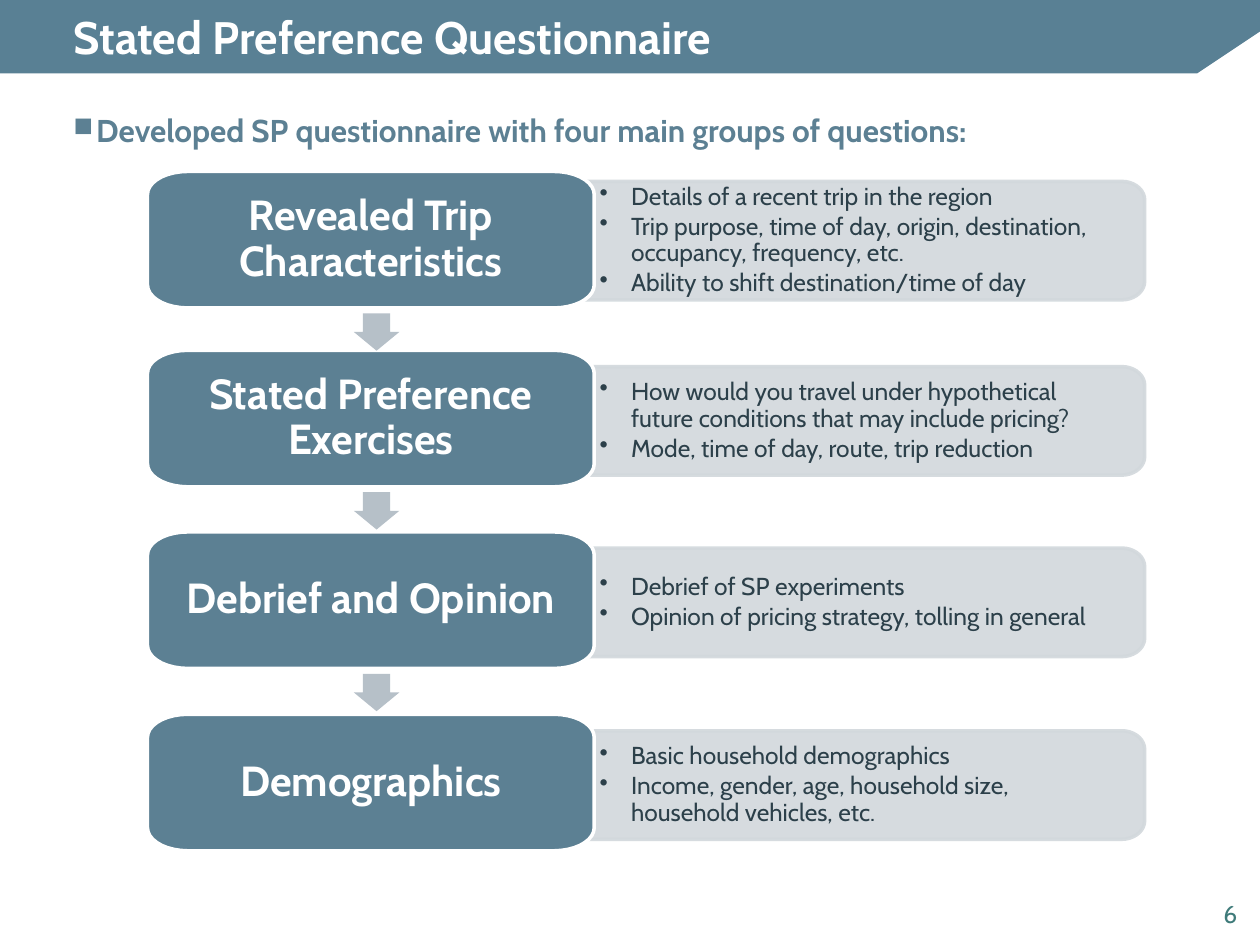
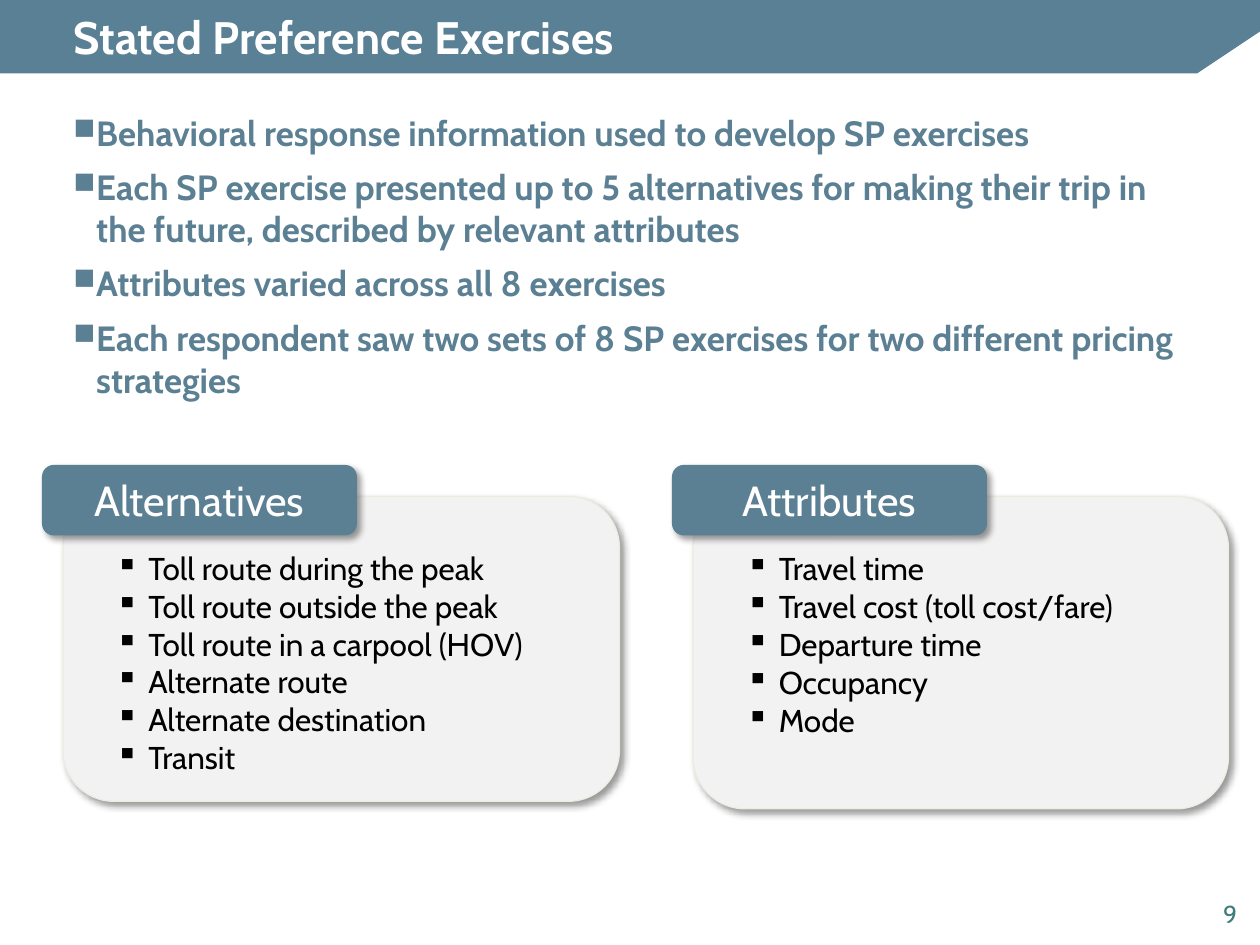
"""Build two slides on a stated preference questionnaire."""
import dataclasses
import math

import lxml.etree
import pptx
import pptx.dml.color
import pptx.enum.shapes
import pptx.enum.text
import pptx.oxml.ns
import pptx.util

Pt = pptx.util.Pt
qn = pptx.oxml.ns.qn
ALIGN = pptx.enum.text.PP_ALIGN
ANCHOR = pptx.enum.text.MSO_ANCHOR
PRESET = pptx.enum.shapes.MSO_SHAPE


@dataclasses.dataclass(frozen=True)
class TextStyle:
    """Size, colour and weight of a kind of text."""
    size: float
    color: str
    bold: bool = False


@dataclasses.dataclass(frozen=True)
class Bullet:
    """Bullet mark with its text indent, hanging distance and size."""
    mark: str
    margin: float
    hanging: float
    percent: int = 100


@dataclasses.dataclass(frozen=True)
class Theme:
    """Colours, type styles and bullets shared by the slides."""
    font: str = "Cabin"
    band: str = "598094"
    blue: str = "5C8093"
    panel: str = "D2D8DC"
    arrow: str = "B6C0C8"
    card: str = "F2F2F2"
    card_line: str = "EEECE1"
    white: str = "FFFFFF"
    title: TextStyle = TextStyle(26, "FFFFFF", True)
    small_lead: TextStyle = TextStyle(18, "5C8093", True)
    lead: TextStyle = TextStyle(20, "5C8093", True)
    step: TextStyle = TextStyle(24, "FFFFFF", True)
    detail: TextStyle = TextStyle(14, "2C404A")
    card_title: TextStyle = TextStyle(24, "FFFFFF")
    card_item: TextStyle = TextStyle(18, "000000")
    number: TextStyle = TextStyle(14, "3F7B7A")
    lead_bullet: Bullet = Bullet("■", 13, 13, 85)
    detail_bullet: Bullet = Bullet("•", 18, 18)
    card_bullet: Bullet = Bullet("▪", 36.7, 18.7)


THEME = Theme()

STEPS = [
    (98, (103.7, 67.7), "Revealed Trip Characteristics",
     ["Details of a recent trip in the region",
      "Trip purpose, time of day, origin, destination, occupancy, frequency, etc.",
      "Ability to shift destination/time of day"]),
    (200.2, (209.5, 62), "Stated Preference Exercises",
     ["How would you travel under hypothetical future conditions that may include pricing?",
      "Mode, time of day, route, trip reduction"]),
    (304, (313.2, 62), "Debrief and Opinion",
     ["Debrief of SP experiments",
      "Opinion of pricing strategy, tolling in general"]),
    (408.2, (417.6, 62), "Demographics",
     ["Basic household demographics",
      "Income, gender, age, household size, household vehicles, etc."]),
]

EXERCISE_POINTS = [
    "Behavioral response information used to develop SP exercises",
    "Each SP exercise presented up to 5 alternatives for making their trip in "
    "the future, described by relevant attributes",
    "Attributes varied across all 8 exercises",
    "Each respondent saw two sets of 8 SP exercises for two different pricing strategies",
]

CARDS = [
    (24, (318, 174.2), "Alternatives",
     ["Toll route during the peak", "Toll route outside the peak",
      "Toll route in a carpool (HOV)", "Alternate route",
      "Alternate destination", "Transit"]),
    (384, (306, 178.5), "Attributes",
     ["Travel time", "Travel cost (toll cost/fare)", "Departure time",
      "Occupancy", "Mode"]),
]


def set_format(target, values):
    """Set each named attribute of the target."""
    for name, value in values.items():
        setattr(target, name, value)


def rgb(color):
    """Return a colour object for a hex string."""
    return pptx.dml.color.RGBColor.from_string(color)


def add_bullet(paragraph, bullet):
    """Give the paragraph a hanging bullet."""
    properties = paragraph._p.get_or_add_pPr()
    properties.set("marL", str(Pt(bullet.margin)))
    properties.set("indent", str(-Pt(bullet.hanging)))
    size = lxml.etree.SubElement(properties, qn("a:buSzPct"))
    size.set("val", str(bullet.percent * 1000))
    lxml.etree.SubElement(properties, qn("a:buChar")).set("char", bullet.mark)


def write_text(shape, lines, style, insets=(7.2, 3.6, 7.2, 3.6),
               anchor=ANCHOR.TOP, bullet=None, **paragraph_format):
    """Fill the shape with one formatted paragraph per line."""
    frame = shape.text_frame
    sides = ("margin_left", "margin_top", "margin_right", "margin_bottom")
    set_format(frame, {
        "word_wrap": True,
        "auto_size": pptx.enum.text.MSO_AUTO_SIZE.NONE,
        "vertical_anchor": anchor,
        **{side: Pt(inset) for side, inset in zip(sides, insets)},
    })
    for index, line in enumerate(lines):
        paragraph = frame.add_paragraph() if index else frame.paragraphs[0]
        if bullet:
            add_bullet(paragraph, bullet)
        set_format(paragraph, {"alignment": ALIGN.LEFT, **paragraph_format})
        run = paragraph.add_run()
        run.text = line
        set_format(run.font, {"name": THEME.font, "size": Pt(style.size),
                              "bold": style.bold})
        run.font.color.rgb = rgb(style.color)


def paint(shape, fill, line=None, line_width=2):
    """Set the fill and outline of the shape and remove its shadow."""
    shape.shadow.inherit = False
    shape.fill.solid()
    shape.fill.fore_color.rgb = rgb(fill)
    if line:
        shape.line.color.rgb = rgb(line)
        shape.line.width = Pt(line_width)
    else:
        shape.line.fill.background()


def make_translucent(shape, percent):
    """Set the opacity of the fill and outline."""
    for color in shape.element.spPr.iter(qn("a:srgbClr")):
        lxml.etree.SubElement(color, qn("a:alpha")).set("val", str(percent * 1000))


def add_shadow(shape):
    """Give the shape a soft shadow to the lower right."""
    effects = shape.element.spPr.find(qn("a:effectLst"))
    shadow = lxml.etree.SubElement(effects, qn("a:outerShdw"), {
        "blurRad": str(Pt(4)), "dist": str(Pt(3)), "dir": str(45 * 60000),
        "algn": "tl", "rotWithShape": "0"})
    color = lxml.etree.SubElement(shadow, qn("a:srgbClr"), {"val": "000000"})
    lxml.etree.SubElement(color, qn("a:alpha")).set("val", "40000")


def add_preset(slide, preset, box):
    """Add a preset shape in a box given in points."""
    return slide.shapes.add_shape(preset, *map(Pt, box))


def add_text_box(slide, box, lines, style, **text_format):
    """Add a text box with formatted lines."""
    text_box = slide.shapes.add_textbox(*map(Pt, box))
    write_text(text_box, lines, style, **text_format)


def add_outline(slide, points):
    """Add a closed freeform through points given in points."""
    start, *others = [(Pt(x), Pt(y)) for x, y in points]
    builder = slide.shapes.build_freeform(*start)
    builder.add_line_segments(others, close=True)
    return builder.convert_to_shape()


def rounded_outline(box, radius_x, radius_y, square_left=False):
    """Return the points of a box with elliptical corners."""
    left, top, width, height = box
    right, bottom = left + width, top + height
    points = []
    corners = ((right, top), (right, bottom), (left, bottom), (left, top))
    for quarter, (x, y) in enumerate(corners):
        if square_left and x == left:
            points.append((x, y))
            continue
        center_x = x + radius_x if x == left else x - radius_x
        center_y = y + radius_y if y == top else y - radius_y
        for step in range(0, 91, 10):
            angle = math.radians(90 * quarter - 90 + step)
            points.append((center_x + radius_x * math.cos(angle),
                           center_y + radius_y * math.sin(angle)))
    return points


def add_slide(presentation, title, number):
    """Add a slide with its band, title and page number."""
    slide = presentation.slides.add_slide(presentation.slide_layouts[5])
    band = add_outline(slide, [(0, 42), (684, 42), (720, 18), (720, 0), (0, 0)])
    paint(band, THEME.band)
    heading = slide.shapes.title
    heading.element.addprevious(band.element)
    set_format(heading, {"left": Pt(42), "top": Pt(0),
                         "width": Pt(648), "height": Pt(42)})
    write_text(heading, [title], THEME.title, insets=(0, 3.6, 7.2, 3.6),
               anchor=ANCHOR.MIDDLE)
    add_text_box(slide, (653, 498, 54, 36), [number], THEME.number,
                 insets=(7.2, 3.6, 0, 3.6), anchor=ANCHOR.BOTTOM,
                 alignment=ALIGN.RIGHT)
    return slide


def add_lead(slide, lines, style, height):
    """Add the main bulleted statements below the band."""
    add_text_box(slide, (42, 60, 648, height), lines, style,
                 insets=(0, 3.6, 7.2, 3.6), bullet=THEME.lead_bullet,
                 space_after=Pt(style.size * 0.35))


def add_step(slide, top, panel_span, name, details):
    """Add a step box with the panel of its details."""
    panel_top, panel_height = panel_span
    panel_box = (334.6, panel_top, 319.5, panel_height)
    panel = add_outline(slide, rounded_outline(panel_box, 13, 10.6, square_left=True))
    paint(panel, THEME.panel, THEME.panel)
    make_translucent(panel, 90)
    write_text(panel, details, THEME.detail, insets=(8, 9.4, 13, 9.4),
               anchor=ANCHOR.MIDDLE, bullet=THEME.detail_bullet,
               line_spacing=0.9, space_after=Pt(2))
    step = add_outline(slide, rounded_outline((84.3, top, 255.3, 78), 23, 13.2))
    paint(step, THEME.blue, THEME.white)
    write_text(step, [name], THEME.step, insets=(17.3, 12.2, 17.3, 12.2),
               anchor=ANCHOR.MIDDLE, alignment=ALIGN.CENTER, line_spacing=0.9)


def add_step_arrow(slide, step_top):
    """Add the arrow that leads on from a step."""
    arrow = add_preset(slide, PRESET.DOWN_ARROW, (202.2, step_top + 81, 26, 21.4))
    arrow.adjustments[0] = 0.6
    paint(arrow, THEME.arrow)


def add_card(slide, left, size, name, items):
    """Add a list card with an overlapping title tab."""
    card = add_preset(slide, PRESET.ROUNDED_RECTANGLE, (left + 12, 283.7, *size))
    paint(card, THEME.card, THEME.card_line, 0.75)
    add_shadow(card)
    write_text(card, items, THEME.card_item, insets=(3.6, 21.6, 3.6, 3.6),
               bullet=THEME.card_bullet)
    tab = add_preset(slide, PRESET.ROUNDED_RECTANGLE, (left, 265.7, 180, 40.3))
    paint(tab, THEME.blue)
    add_shadow(tab)
    write_text(tab, [name], THEME.card_title, anchor=ANCHOR.MIDDLE,
               alignment=ALIGN.CENTER)


def main():
    """Build and save the presentation."""
    presentation = pptx.Presentation()
    set_format(presentation, {"slide_width": Pt(720), "slide_height": Pt(540)})

    slide = add_slide(presentation, "Stated Preference Questionnaire", "6")
    add_lead(slide, ["Developed SP questionnaire with four main groups of questions:"],
             THEME.small_lead, 36)
    for step in STEPS:
        add_step(slide, *step)
    for step in STEPS[:-1]:
        add_step_arrow(slide, step[0])

    slide = add_slide(presentation, "Stated Preference Exercises", "9")
    add_lead(slide, EXERCISE_POINTS, THEME.lead, 186)
    for card in CARDS:
        add_card(slide, *card)

    presentation.save("out.pptx")


if __name__ == "__main__":
    main()
